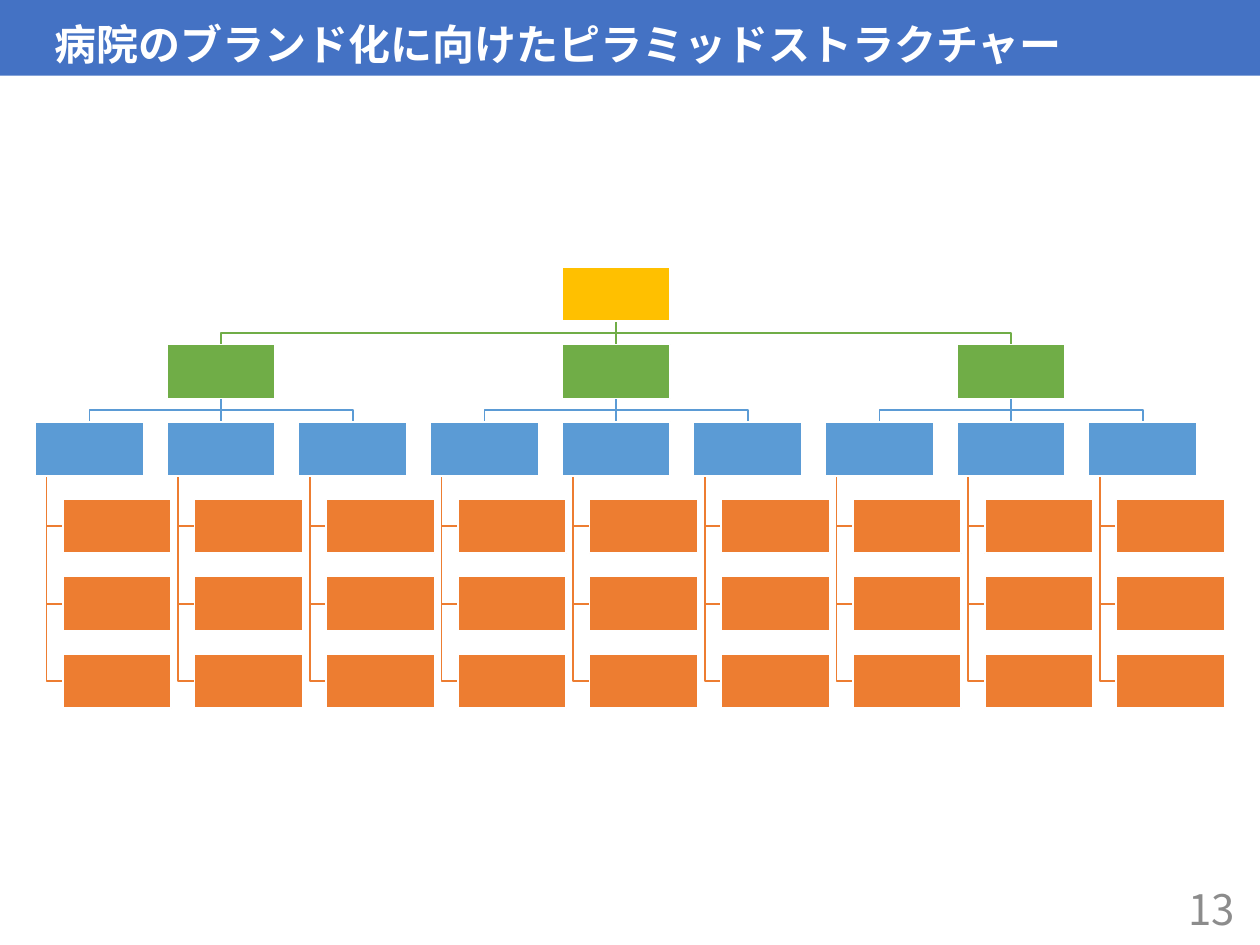
from dataclasses import dataclass

from lxml import etree
from pptx import Presentation
from pptx.dml.color import RGBColor
from pptx.enum.shapes import MSO_CONNECTOR, MSO_SHAPE
from pptx.enum.text import MSO_ANCHOR, PP_ALIGN
from pptx.oxml.ns import qn
from pptx.util import Inches, Pt

RECTANGLE = MSO_SHAPE.RECTANGLE
STRAIGHT = MSO_CONNECTOR.STRAIGHT
BOTTOM, MIDDLE = MSO_ANCHOR.BOTTOM, MSO_ANCHOR.MIDDLE
LEFT, RIGHT = PP_ALIGN.LEFT, PP_ALIGN.RIGHT


@dataclass(frozen=True)
class Theme:
    """Colours, type and line weight of the slide."""
    font: str = "Noto Sans CJK JP"
    text_size: int = 24
    line_width: int = 1
    white: str = "FFFFFF"
    banner: str = "4472C4"
    number: str = "8C8C8C"
    top: str = "FFC000"
    branch: str = "70AD47"
    column: str = "5B9BD5"
    leaf: str = "ED7D31"


THEME = Theme()
BOX_WIDTH, BOX_HEIGHT = 0.86, 0.43
FIRST_LEFT, LAST_LEFT = 0.28, 8.64
FIRST_TOP, LAST_TOP = 2.12, 5.19
COLUMNS, ROWS, CHILDREN = 9, 6, 3
COLUMN_PITCH = (LAST_LEFT - FIRST_LEFT) / (COLUMNS - 1)
ROW_PITCH = (LAST_TOP - FIRST_TOP) / (ROWS - 1)
LEAF_INDENT, STEM_INDENT = 0.22, 0.09


def column_left(column):
    """Return the left edge of a column of boxes."""
    return FIRST_LEFT + column * COLUMN_PITCH


def row_top(row):
    """Return the top edge of a row of boxes."""
    return FIRST_TOP + row * ROW_PITCH


def write(frame, text, color, anchor, alignment, bold=False):
    """Write one line of text into a frame."""
    frame.word_wrap = True
    frame.vertical_anchor = anchor
    line = frame.paragraphs[0]
    line.alignment = alignment
    run = line.add_run()
    run.text = text
    run.font.name = THEME.font
    run.font.size = Pt(THEME.text_size)
    run.font.bold = bold
    run.font.color.rgb = RGBColor.from_string(color)
    east_asian = etree.SubElement(run.font._element, qn("a:ea"))
    east_asian.set("typeface", THEME.font)
    return line


def style_line(line, color):
    """Give a line the standard weight and a colour."""
    line.width = Pt(THEME.line_width)
    line.color.rgb = RGBColor.from_string(color)


def add_banner(slide, title):
    """Add the title band across the top."""
    banner = slide.shapes.add_shape(RECTANGLE, 0, 0, Inches(10), Inches(0.6))
    banner.shadow.inherit = False
    banner.fill.solid()
    banner.fill.fore_color.rgb = RGBColor.from_string(THEME.banner)
    banner.line.fill.background()
    heading = write(banner.text_frame, title, THEME.white, BOTTOM, LEFT, bold=True)
    heading.line_spacing = 0.9


def add_page_number(slide, number):
    """Add the page number at the bottom right."""
    page = slide.shapes.add_textbox(Inches(7.65), Inches(7.01), Inches(2.25), Inches(0.4))
    write(page.text_frame, number, THEME.number, MIDDLE, RIGHT)


def add_box(chart, left, top, color):
    """Add one box of the hierarchy."""
    box = chart.shapes.add_shape(
        RECTANGLE, Inches(left), Inches(top), Inches(BOX_WIDTH), Inches(BOX_HEIGHT))
    box.shadow.inherit = False
    box.fill.solid()
    box.fill.fore_color.rgb = RGBColor.from_string(color)
    style_line(box.line, THEME.white)


def add_bent_link(chart, points, color):
    """Add an open link with square bends."""
    start, *bends = [(Inches(x), Inches(y)) for x, y in points]
    builder = chart.shapes.build_freeform(*start)
    builder.add_line_segments(bends, close=False)
    link = builder.convert_to_shape()
    link.shadow.inherit = False
    link.fill.background()
    style_line(link.line, color)


def add_straight_link(chart, x, top, bottom, color):
    """Add a vertical link."""
    link = chart.shapes.add_connector(
        STRAIGHT, Inches(x), Inches(top), Inches(x), Inches(bottom))
    style_line(link.line, color)
    etree.SubElement(link._element.spPr, qn("a:effectLst"))


def add_fan(chart, parent, children, row, color):
    """Link a parent column to its child columns in the next row."""
    top, bottom = row_top(row) + BOX_HEIGHT, row_top(row + 1)
    middle = (top + bottom) / 2
    start = column_left(parent) + BOX_WIDTH / 2
    for child in children:
        end = column_left(child) + BOX_WIDTH / 2
        if child == parent:
            add_straight_link(chart, start, top, bottom, color)
        else:
            route = [(start, top), (start, middle), (end, middle), (end, bottom)]
            add_bent_link(chart, route, color)


def add_leaf_links(chart, column, leaf_rows):
    """Link a column box to the leaves hanging below it."""
    stem = column_left(column) + STEM_INDENT
    top = row_top(leaf_rows[0] - 1) + BOX_HEIGHT
    for row in leaf_rows:
        middle = row_top(row) + BOX_HEIGHT / 2
        leaf_left = column_left(column) + LEAF_INDENT
        add_bent_link(chart, [(stem, top), (stem, middle), (leaf_left, middle)], THEME.leaf)


def add_hierarchy(slide):
    """Add the pyramid with its links behind its boxes."""
    chart = slide.shapes.add_group_shape()
    root = COLUMNS // 2
    branches = range(1, COLUMNS, CHILDREN)
    leaf_rows = range(ROWS - CHILDREN, ROWS)
    add_fan(chart, root, branches, 0, THEME.branch)
    for branch in branches:
        add_fan(chart, branch, range(branch - 1, branch + 2), 1, THEME.column)
    for column in range(COLUMNS):
        add_leaf_links(chart, column, leaf_rows)

    add_box(chart, column_left(root), row_top(0), THEME.top)
    for branch in branches:
        add_box(chart, column_left(branch), row_top(1), THEME.branch)
    for column in range(COLUMNS):
        add_box(chart, column_left(column), row_top(2), THEME.column)
        for row in leaf_rows:
            add_box(chart, column_left(column) + LEAF_INDENT, row_top(row), THEME.leaf)


def main():
    """Build and save the slide."""
    deck = Presentation()
    deck.slide_width, deck.slide_height = Inches(10), Inches(7.5)
    slide = deck.slides.add_slide(deck.slide_layouts[6])
    add_banner(slide, " 病院のブランド化に向けたピラミッドストラクチャー".replace(" ", "　"))
    add_page_number(slide, "13")
    add_hierarchy(slide)
    deck.save("out.pptx")


if __name__ == "__main__":
    main()
